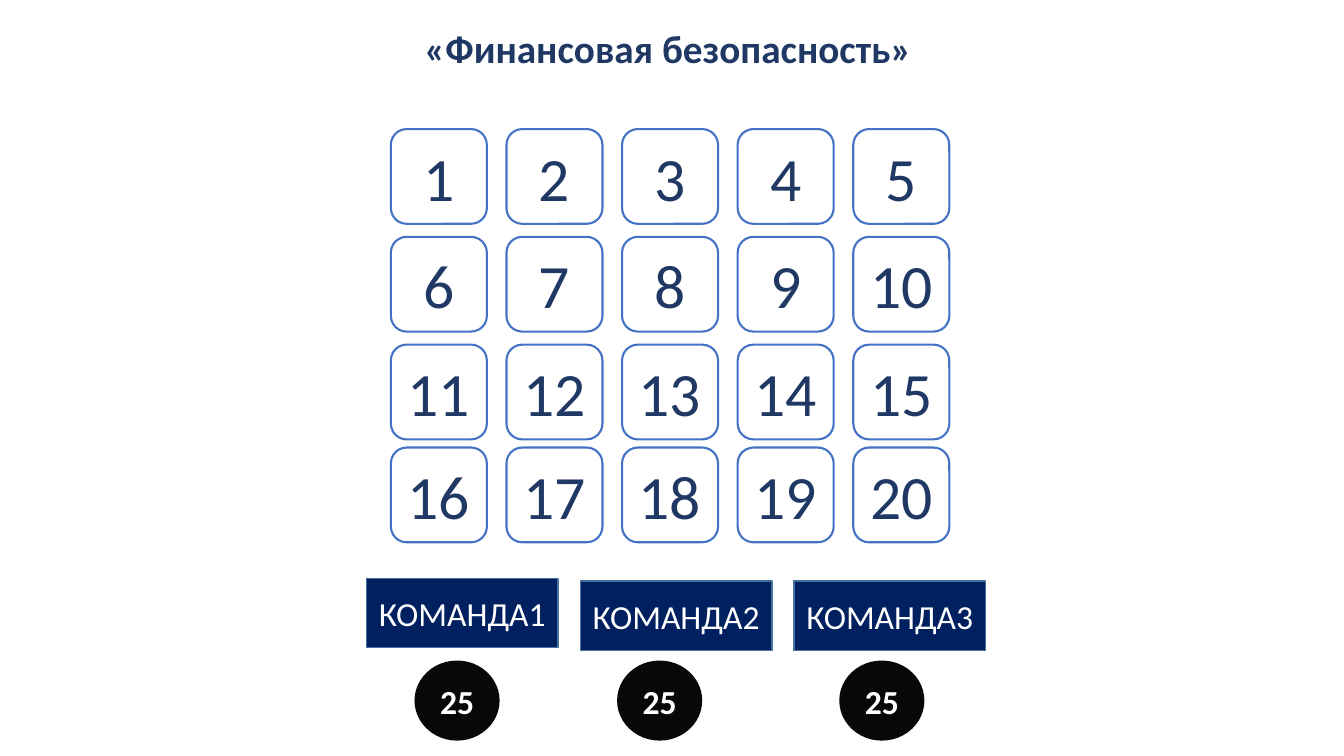
import pptx
import pptx.util
from pptx.dml.color import RGBColor
from pptx.enum.shapes import MSO_SHAPE
from pptx.enum.text import MSO_ANCHOR, MSO_AUTO_SIZE, PP_ALIGN

Pt = pptx.util.Pt

FONT = "Calibri"
COLORS = {
    "white": "FFFFFF",
    "navy": "203864",
    "tile_line": "4472C4",
    "team": "002060",
    "team_line": "43739E",
    "score": "080808",
}
COLUMNS = 5
TILE_LEFT, TILE_STEP = 279.2, 82.58
TILE_TOPS = (92.2, 169.2, 246.2, 319.7)
# Team name, name box left and top, score left
TEAMS = (
    ("КОМАНДА1", 261.8, 413, 296.6),
    ("КОМАНДА2", 414.6, 415, 441.3),
    ("КОМАНДА3", 567.2, 415, 600),
)


def rgb(name):
    return RGBColor.from_string(COLORS[name])


def set_text(sp, text, size, color, bold=False):
    """Write one centred line into a shape."""
    tf = sp.text_frame
    tf.text = text
    tf.vertical_anchor = MSO_ANCHOR.MIDDLE
    p = tf.paragraphs[0]
    p.alignment = PP_ALIGN.CENTER
    font = p.runs[0].font
    font.name, font.size, font.bold = FONT, Pt(size), bold
    font.color.rgb = rgb(color)


def add_box(s, kind, box, fill, line, line_width):
    sp = s.shapes.add_shape(kind, *map(Pt, box))
    sp.shadow.inherit = False
    sp.fill.solid()
    sp.fill.fore_color.rgb = rgb(fill)
    sp.line.color.rgb = rgb(line)
    sp.line.width = Pt(line_width)
    return sp


def set_title(s, text):
    sp = s.shapes.title
    sp.left, sp.top, sp.width, sp.height = map(Pt, (293.8, 13.7, 366.5, 41))
    set_text(sp, text, 28, "navy", bold=True)
    sp.text_frame.word_wrap = False
    sp.text_frame.auto_size = MSO_AUTO_SIZE.SHAPE_TO_FIT_TEXT


def add_tile(s, number, left, top):
    sp = add_box(s, MSO_SHAPE.ROUNDED_RECTANGLE, (left, top, 68.6, 67.7),
                 "white", "tile_line", 1.5)
    set_text(sp, str(number), 44, "navy")


def add_team(s, name, left, top, score_left):
    sp = add_box(s, MSO_SHAPE.RECTANGLE, (left, top, 136.8, 49.7),
                 "team", "team_line", 1)
    set_text(sp, name, 24, "white")
    sp = add_box(s, MSO_SHAPE.OVAL, (score_left, 472.3, 59.8, 56.2),
                 "score", "score", 1)
    set_text(sp, "25", 24, "white", bold=True)


def main():
    prs = pptx.Presentation()
    prs.slide_width, prs.slide_height = Pt(960), Pt(540)
    s = prs.slides.add_slide(prs.slide_layouts.get_by_name("Title Only"))
    set_title(s, "«Финансовая безопасность»")
    for row, top in enumerate(TILE_TOPS):
        for col in range(COLUMNS):
            add_tile(s, row * COLUMNS + col + 1, TILE_LEFT + col * TILE_STEP, top)
    for team in TEAMS:
        add_team(s, *team)
    prs.save("out.pptx")


if __name__ == "__main__":
    main()
